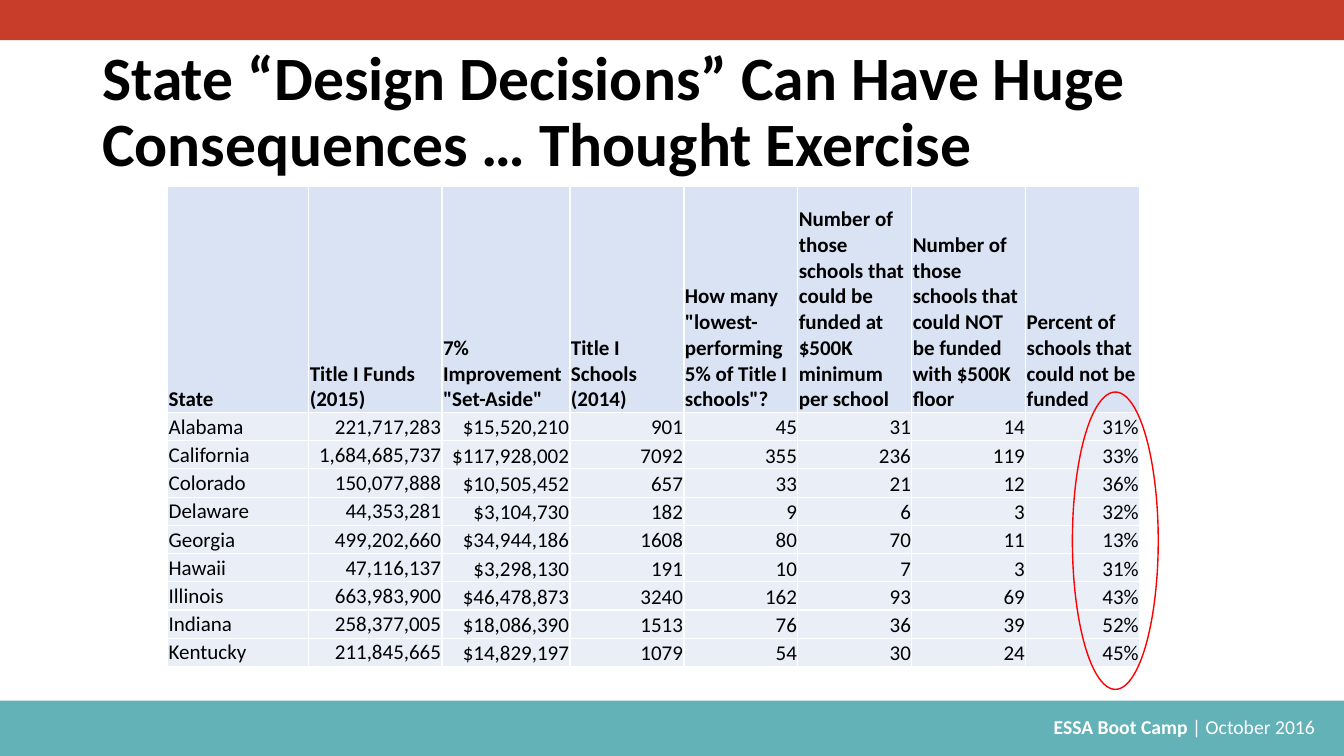
from lxml import etree
from pptx import Presentation
from pptx.dml.color import RGBColor
from pptx.enum.shapes import MSO_SHAPE
from pptx.enum.text import MSO_ANCHOR, PP_ALIGN
from pptx.oxml.ns import qn
from pptx.util import Pt

RECT, OVAL = MSO_SHAPE.RECTANGLE, MSO_SHAPE.OVAL
LEFT, RIGHT = PP_ALIGN.LEFT, PP_ALIGN.RIGHT
MIDDLE, BOTTOM = MSO_ANCHOR.MIDDLE, MSO_ANCHOR.BOTTOM
TEAL = RGBColor(0x63, 0xB2, 0xB8)
BRICK = RGBColor(0xC8, 0x3C, 0x2A)
RED = RGBColor(0xFF, 0, 0)
BLACK = RGBColor(0, 0, 0)
WHITE = RGBColor(0xFF, 0xFF, 0xFF)
HEAD = RGBColor(0xDA, 0xE3, 0xF3)
BODY = RGBColor(0xEA, 0xEF, 0xF7)

ROWS = [
    ("State", "Title I Funds (2015)", '7% Improvement "Set-Aside"',
     "Title I Schools (2014)",
     'How many "lowest-performing 5% of Title I schools"?',
     "Number of those schools that could be funded at $500K minimum per school",
     "Number of those schools that could NOT be funded with $500K floor",
     "Percent of schools that could not be funded"),
    ("Alabama", "221,717,283", "$15,520,210", "901", "45", "31", "14", "31%"),
    ("California", "1,684,685,737", "$117,928,002", "7092", "355", "236", "119", "33%"),
    ("Colorado", "150,077,888", "$10,505,452", "657", "33", "21", "12", "36%"),
    ("Delaware", "44,353,281", "$3,104,730", "182", "9", "6", "3", "32%"),
    ("Georgia", "499,202,660", "$34,944,186", "1608", "80", "70", "11", "13%"),
    ("Hawaii", "47,116,137", "$3,298,130", "191", "10", "7", "3", "31%"),
    ("Illinois", "663,983,900", "$46,478,873", "3240", "162", "93", "69", "43%"),
    ("Indiana", "258,377,005", "$18,086,390", "1513", "76", "36", "39", "52%"),
    ("Kentucky", "211,845,665", "$14,829,197", "1079", "54", "30", "24", "45%"),
]
WIDTHS = [100.8, 95.2, 91.4] + [81.4] * 5
HEIGHTS = [161.3] + [20.16] * 9


def add_run(para, text, size, color, bold):
    run = para.add_run()
    run.text = text
    run.font.name = "Calibri"
    run.font.size = Pt(size)
    run.font.color.rgb = color
    run.font.bold = bold


def add_box(left, top, width, height):
    box = slide.shapes.add_textbox(Pt(left), Pt(top), Pt(width), Pt(height))
    box.text_frame.word_wrap = True
    return box.text_frame


prs = Presentation()
prs.slide_width, prs.slide_height = Pt(960), Pt(540)
slide = prs.slides.add_slide(prs.slide_layouts[6])

for top, height, color in [(500.4, 39.6, TEAL), (0, 28.8, BRICK)]:
    band = slide.shapes.add_shape(RECT, 0, Pt(top), Pt(960), Pt(height))
    band.shadow.inherit = False
    band.fill.solid()
    band.fill.fore_color.rgb = color
    band.line.fill.background()

foot = add_box(345.6, 506.9, 604, 24.2).paragraphs[0]
foot.alignment = RIGHT
add_run(foot, "ESSA Boot Camp ", 14, WHITE, True)
add_run(foot, "| October 2016 ", 14, WHITE, False)

frame = add_box(66, 28.8, 828, 104.4)
frame.vertical_anchor = MIDDLE
title = frame.paragraphs[0]
title.line_spacing = 0.9
add_run(title, "State “Design Decisions” Can Have Huge Consequences … Thought Exercise",
        44, BLACK, True)

table = slide.shapes.add_table(
    len(ROWS), len(WIDTHS), Pt(119.8), Pt(133.3),
    Pt(sum(WIDTHS)), Pt(sum(HEIGHTS))).table
for col, width in zip(table.columns, WIDTHS):
    col.width = Pt(width)
for row, height in zip(table.rows, HEIGHTS):
    row.height = Pt(height)

for i, texts in enumerate(ROWS):
    for j, text in enumerate(texts):
        cell = table.cell(i, j)
        cell.margin_left = cell.margin_right = cell.margin_top = Pt(0.7)
        cell.margin_bottom = 0
        cell.vertical_anchor = MIDDLE if i > 1 and j < 2 else BOTTOM
        props = cell._tc.get_or_add_tcPr()
        for side in ("a:lnL", "a:lnR", "a:lnT", "a:lnB"):
            edge = etree.SubElement(props, qn(side), w=str(Pt(1)))
            paint = etree.SubElement(edge, qn("a:solidFill"))
            etree.SubElement(paint, qn("a:srgbClr"), val=str(WHITE))
        cell.fill.solid()
        cell.fill.fore_color.rgb = BODY if i else HEAD
        para = cell.text_frame.paragraphs[0]
        para.alignment = RIGHT if i and j else LEFT
        add_run(para, text, 15, BLACK, i == 0)

ring = slide.shapes.add_shape(OVAL, Pt(766), Pt(280), Pt(61.3), Pt(212.4))
ring.shadow.inherit = False
ring.fill.background()
ring.line.color.rgb = RED
ring.line.width = Pt(1)

prs.save("out.pptx")
